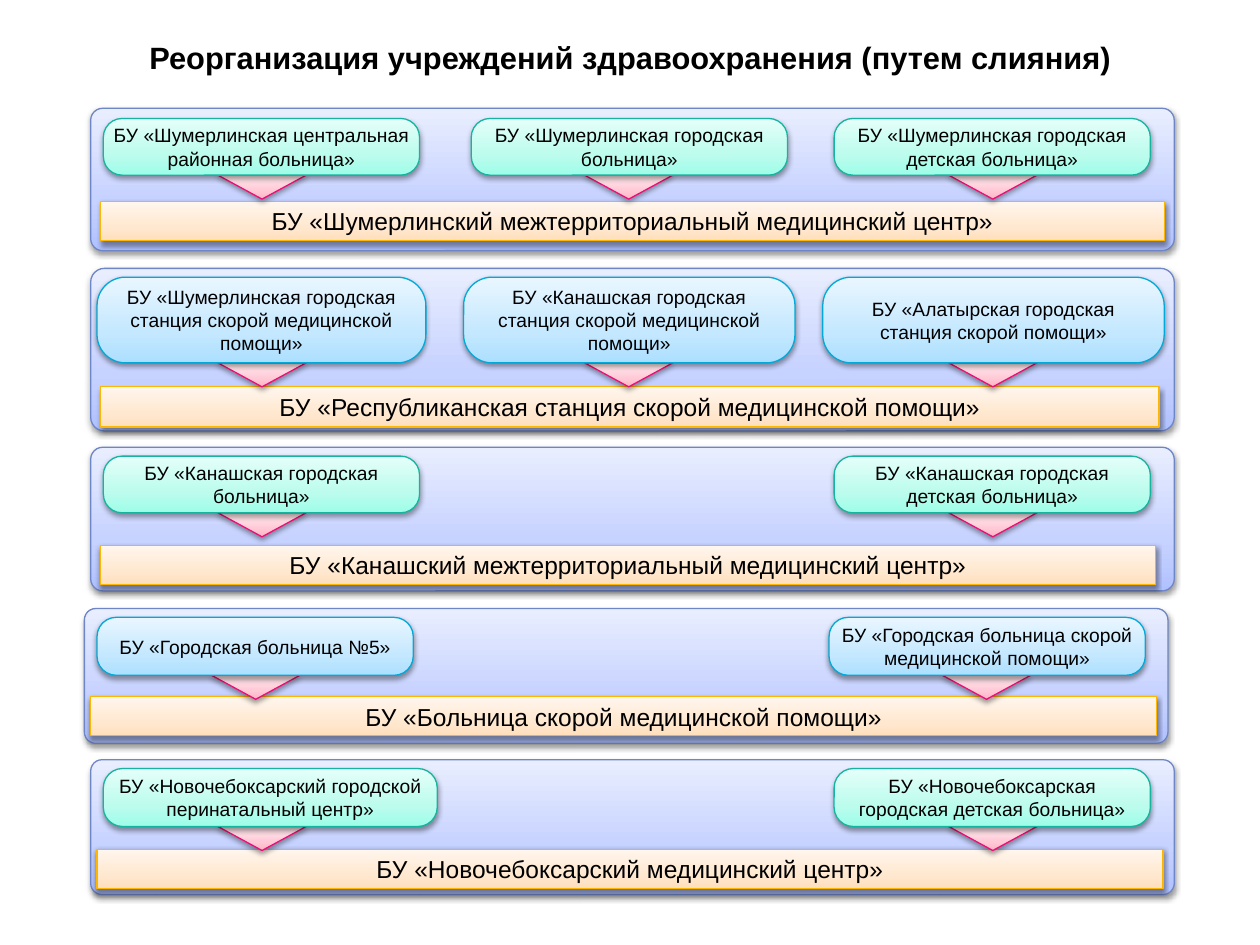
"""Build a slide on merging healthcare institutions into five centres."""
from copy import deepcopy

from lxml.etree import SubElement
from pptx import Presentation
from pptx.dml.color import RGBColor
from pptx.enum.shapes import MSO_SHAPE as Shape
from pptx.enum.text import MSO_ANCHOR as Anchor, PP_ALIGN as Align
from pptx.oxml.ns import qn
from pptx.util import Inches, Pt

PANEL = ("B0C1FF", "C6D2FF", "E9EEFF", "6E86C6")
CENTRE = ("FFDFBC", "FFE8D0", "FFF6ED", "FEB604")
ARROW = ("FFB3C6", "FFC9D6", "FFEBEF", "EA0F77")
GREEN = ("9DFDE8", "BBFCED", "E4FFF9", "16B39E")
BLUE = ("ACDFFF", "C4E8FF", "E9F6FF", "00A9D7")


def write(shape, text, size, inset_x, inset_y, anchor=Anchor.MIDDLE, bold=False):
    frame = shape.text_frame
    frame.word_wrap = True
    frame.vertical_anchor = anchor
    frame.margin_left = frame.margin_right = Inches(inset_x)
    frame.margin_top = frame.margin_bottom = Inches(inset_y)
    paragraph = frame.paragraphs[0]
    paragraph.text = text
    paragraph.alignment = Align.CENTER
    paragraph.font.name = "Arial"
    paragraph.font.size = Pt(size)
    paragraph.font.bold = bold
    paragraph.font.color.rgb = RGBColor.from_string("000000")


def add_glossy(group, kind, box, palette, rounding=None):
    shape = group.shapes.add_shape(kind, *[Inches(value) for value in box])
    if rounding:
        shape.adjustments[0] = rounding
    shape.fill.gradient()
    shape.fill.gradient_angle = 90
    properties = shape._element.spPr
    stop_list = properties.find(qn("a:gradFill")).find(qn("a:gsLst"))
    stop_list.append(deepcopy(stop_list[-1]))
    for stop, position, colour in zip(shape.fill.gradient_stops, (0, 0.35, 1), palette):
        stop.position = position
        stop.color.rgb = RGBColor.from_string(colour)
    shape.line.color.rgb = RGBColor.from_string(palette[3])
    shape.line.width = Pt(0.75)
    shape.shadow.inherit = False
    shadow = SubElement(properties.find(qn("a:effectLst")), qn("a:outerShdw"),
                        blurRad=str(Pt(3.1)), dist=str(Pt(1.6)), dir="5400000", rotWithShape="0")
    shadow_colour = SubElement(shadow, qn("a:srgbClr"), val="000000")
    SubElement(shadow_colour, qn("a:alpha"), val="38000")
    return shape


presentation = Presentation()
presentation.slide_width, presentation.slide_height = Inches(10), Inches(7.5)
slide = presentation.slides.add_slide(presentation.slide_layouts[5])

title = slide.shapes.title
title.left, title.top, title.width, title.height = Inches(0.18), Inches(0.25), Inches(9.65), Inches(0.4)
write(title, "Реорганизация учреждений здравоохранения (путем слияния)", 17.6, 0.04, 0.05, bold=True)

mergers = [
    ((0.72, 0.86, 8.6, 1.13), GREEN, 0.94, 0.45,
     [(0.82, 2.51, 1.73, "БУ «Шумерлинская центральная районная больница»"),
      (3.74, 2.51, 4.64, "БУ «Шумерлинская городская больница»"),
      (6.62, 2.51, 7.53, "БУ «Шумерлинская городская детская больница»")],
     (0.8, 1.6, 8.44, 0.31), "БУ «Шумерлинский межтерриториальный медицинский центр»"),
    ((0.72, 2.13, 8.6, 1.29), BLUE, 2.2, 0.68,
     [(0.77, 2.61, 1.73, "БУ «Шумерлинская городская станция скорой медицинской помощи»"),
      (3.68, 2.63, 4.64, "БУ «Канашская городская станция скорой медицинской помощи»"),
      (6.53, 2.71, 7.53, "БУ «Алатырская городская станция скорой помощи»")],
     (0.8, 3.07, 8.4, 0.32), "БУ «Республиканская станция скорой медицинской помощи»"),
    ((0.72, 3.55, 8.6, 1.14), GREEN, 3.62, 0.45,
     [(0.82, 2.51, 1.73, "БУ «Канашская городская больница»"),
      (6.62, 2.51, 7.53, "БУ «Канашская городская детская больница»")],
     (0.8, 4.33, 8.37, 0.31), "БУ «Канашский межтерриториальный медицинский центр»"),
    ((0.67, 4.83, 8.6, 1.07), BLUE, 4.9, 0.46,
     [(0.77, 2.51, 1.68, "БУ «Городская больница №5»"),
      (6.58, 2.51, 7.48, "БУ «Городская больница скорой медицинской помощи»")],
     (0.72, 5.53, 8.46, 0.31), "БУ «Больница скорой медицинской помощи»"),
    ((0.72, 6.03, 8.6, 1.07), GREEN, 6.1, 0.46,
     [(0.82, 2.65, 1.73, "БУ «Новочебоксарский городской перинатальный центр»"),
      (6.62, 2.51, 7.53, "БУ «Новочебоксарская городская детская больница»")],
     (0.77, 6.74, 8.46, 0.31), "БУ «Новочебоксарский медицинский центр»"),
]

for panel_box, card_palette, card_top, card_height, cards, centre_box, centre_name in mergers:
    group = slide.shapes.add_group_shape()
    add_glossy(group, Shape.ROUNDED_RECTANGLE, panel_box, PANEL, 0.084)
    centre = add_glossy(group, Shape.RECTANGLE, centre_box, CENTRE)
    write(centre, centre_name, 14, 0.04, 0.04)
    for _, _, arrow_left, _ in cards:
        arrow_box = (arrow_left, card_top + card_height, 0.7, 0.19)
        add_glossy(group, Shape.FLOWCHART_MERGE, arrow_box, ARROW)
    for column, (left, width, _, name) in enumerate(cards):
        card_box = (left, card_top, width, card_height)
        card = add_glossy(group, Shape.ROUNDED_RECTANGLE, card_box, card_palette, 0.331)
        write(card, name, 11, 0.04 if column else 0, 0)

presentation.save("out.pptx")
